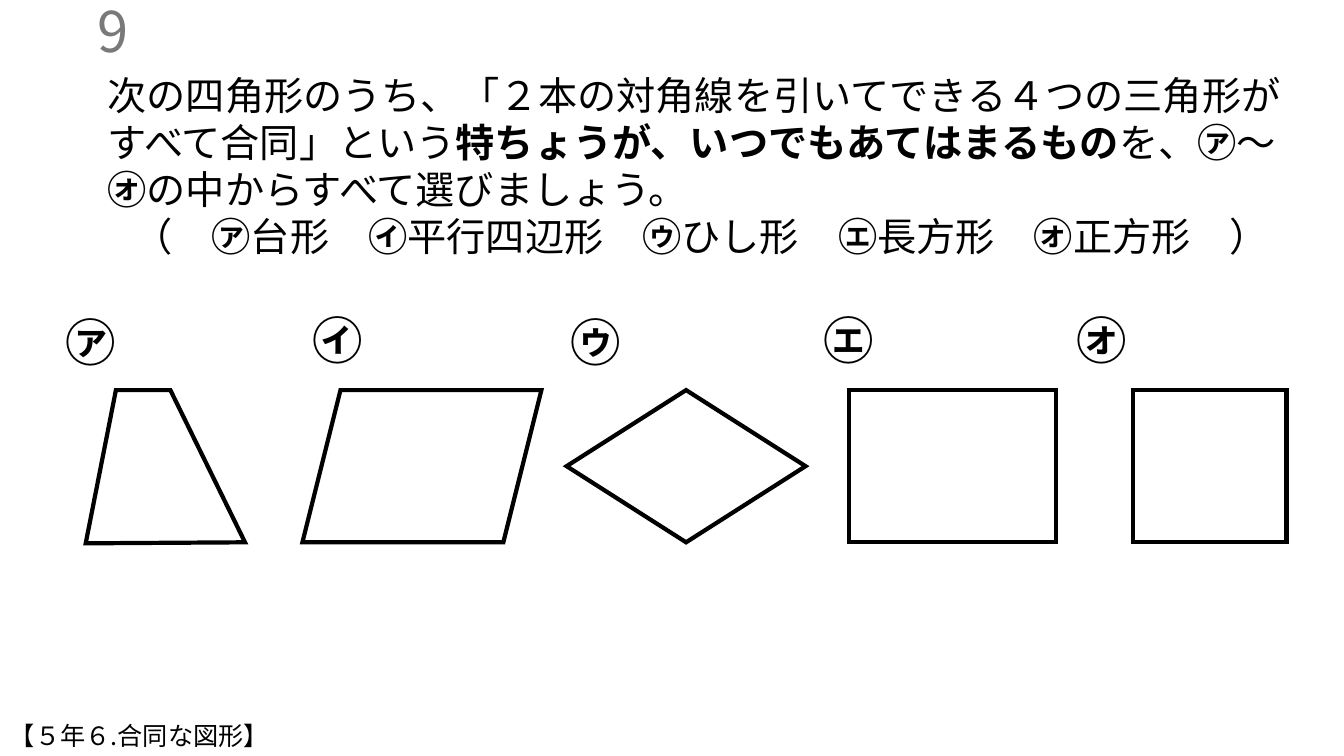
"""Build a quiz slide about quadrilaterals and their diagonals."""
from lxml.etree import SubElement
from pptx import Presentation
from pptx.dml.color import RGBColor
from pptx.enum.shapes import MSO_SHAPE as Shape
from pptx.enum.text import MSO_ANCHOR as Anchor, PP_ALIGN as Align
from pptx.oxml.ns import qn
from pptx.util import Inches, Pt

WIDTH, HEIGHT = 13.33, 7.5
FONT, BLACK, GRAY = "Noto Sans CJK JP", "000000", "797979"
FIGURE_TOP, FIGURE_HEIGHT = 3.87, 1.51

QUESTION = [
    ("次の四角形のうち、「２本の対角線を引いてできる４つの三角形がすべて合同」という", False),
    ("特ちょうが、いつでもあてはまるもの", True),
    ("を、", False), ("㋐", True), ("～", False), ("㋔", True),
    ("の中からすべて選びましょう。", False),
]
MARKS = "㋐㋑㋒㋓㋔"
NAMES = ["台形", "平行四辺形", "ひし形", "長方形", "正方形"]
MARK_BOXES = [(0.55, 3.04, 0.82), (3, 3.02, 0.96), (5.56, 3.04, 0.64),
              (8.07, 3.02, 0.64), (10.58, 3.02, 0.64)]
FIGURES = [(Shape.PARALLELOGRAM, 3, 2.37), (Shape.DIAMOND, 5.62, 2.37),
           (Shape.RECTANGLE, 8.42, 2.05), (Shape.RECTANGLE, 11.24, 1.52)]
TRAPEZOID = [(1.15, 3.87), (0.85, 5.39), (2.43, 5.38), (1.69, 3.87)]


def color(value):
    return RGBColor.from_string(value)


def add_text(slide, box, paragraphs, size, ink=BLACK, aligns=(Align.LEFT,), anchor=Anchor.TOP):
    frame = slide.shapes.add_textbox(*map(Inches, box)).text_frame
    frame.word_wrap = True
    frame.vertical_anchor = anchor
    for index, (runs, align) in enumerate(zip(paragraphs, aligns)):
        paragraph = frame.add_paragraph() if index else frame.paragraphs[0]
        paragraph.alignment = align
        font = paragraph.font
        font.size, font.name = Pt(size), FONT
        font.color.rgb = color(ink)
        for words, bold in runs:
            run = paragraph.add_run()
            run.text = words
            run.font.bold = bold
            SubElement(run.font._element, qn("a:ea"), typeface=FONT)


def outline(shape):
    shape.shadow.inherit = False
    shape.fill.background()
    shape.line.color.rgb = color(BLACK)
    shape.line.width = Pt(3)
    SubElement(shape.line._get_or_add_ln(), qn("a:miter"), lim="800000")


def add_figures(slide):
    for kind, left, width in FIGURES:
        outline(slide.shapes.add_shape(
            kind, *map(Inches, (left, FIGURE_TOP, width, FIGURE_HEIGHT))))
    start, *corners = [(Inches(x), Inches(y)) for x, y in TRAPEZOID]
    builder = slide.shapes.build_freeform(*start)
    builder.add_line_segments(corners, close=True)
    outline(builder.convert_to_shape())


def main():
    presentation = Presentation()
    presentation.slide_width, presentation.slide_height = Inches(WIDTH), Inches(HEIGHT)
    slide = presentation.slides.add_slide(presentation.slide_layouts[6])

    add_text(slide, (-1.63, 0.1, 3, 0.4), [[("9", False)]], 40, GRAY,
             (Align.RIGHT,), Anchor.MIDDLE)
    add_figures(slide)
    for mark, (left, top, width) in zip(MARKS, MARK_BOXES):
        add_text(slide, (left, top, width, 0.71), [[(mark, True)]], 36)

    choices = [("（　", False)]
    for mark, name in zip(MARKS, NAMES):
        choices += [(mark, True), (name + "　", False)]
    choices.append(("）", False))
    add_text(slide, (0.97, 0.66, 11.97, 1.99), [QUESTION, choices], 28,
             aligns=(Align.LEFT, Align.CENTER))
    add_text(slide, (0, 7.1, 7.49, 0.4), [[("【５年６.合同な図形】", False)]], 18)
    presentation.save("out.pptx")


if __name__ == "__main__":
    main()
